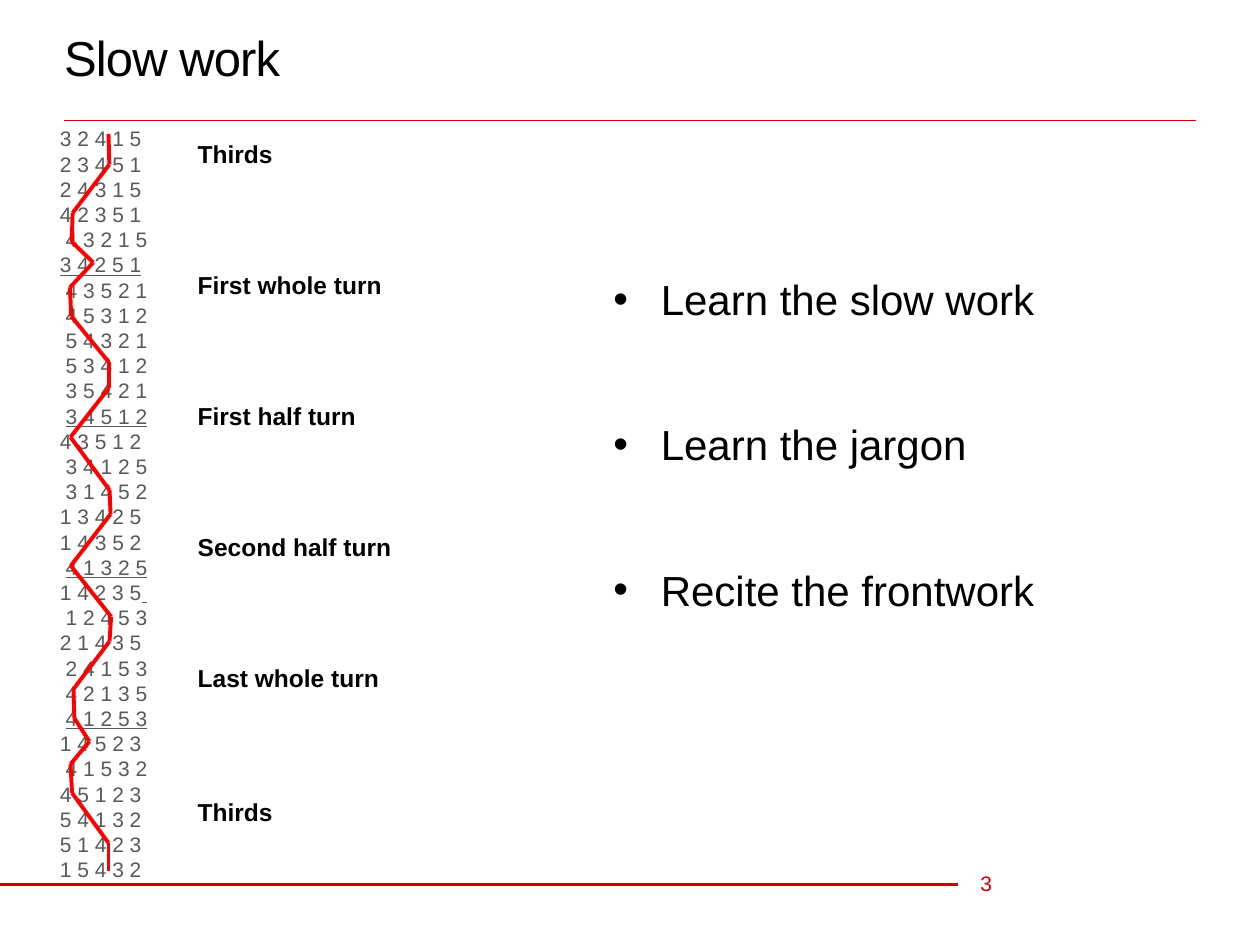
import itertools
import pptx
import pptx.util
import pptx.dml.color
import pptx.enum.shapes
import pptx.enum.text
from dataclasses import dataclass
from lxml import etree
from pptx.oxml.ns import qn

Pt = pptx.util.Pt
RGB = pptx.dml.color.RGBColor
ANCHOR = pptx.enum.text.MSO_ANCHOR


@dataclass(frozen=True)
class Theme:
    font: str = "Arial"
    black: RGB = RGB(0, 0, 0)
    grey: RGB = RGB(0x58, 0x59, 0x5B)
    rule: RGB = RGB(0xD2, 0, 0)
    path_red: RGB = RGB(0xFF, 0, 0)
    title: int = 28
    bullet: int = 24
    label: int = 14
    small: int = 12


theme = Theme()
deck = pptx.Presentation()
deck.slide_width, deck.slide_height = Pt(720), Pt(540)
page = deck.slides.add_slide(deck.slide_layouts[6])


def add_text(left, top, width, height, text, size, color, anchor=ANCHOR.TOP):
    frame = page.shapes.add_textbox(Pt(left), Pt(top), Pt(width), Pt(height)).text_frame
    frame.margin_left = frame.margin_right = frame.margin_top = frame.margin_bottom = 0
    frame.word_wrap = True
    frame.vertical_anchor = anchor
    frame.text = text
    for para in frame.paragraphs:
        for span in para.runs:
            span.font.name = theme.font
            span.font.size = Pt(size)
            span.font.color.rgb = color
    return frame


def add_line(start, end, color, weight):
    line = page.shapes.add_connector(
        pptx.enum.shapes.MSO_CONNECTOR.STRAIGHT, *[Pt(value) for value in (*start, *end)])
    line.line.color.rgb = color
    line.line.width = Pt(weight)
    etree.SubElement(line._element.spPr, qn("a:effectLst"))


# Rules and slide number
add_line((36.7, 69.1), (683.3, 69.1), theme.rule, 0.5)
add_line((0, 505.4), (547.2, 505.4), theme.rule, 2)
add_text(560.2, 490.3, 36.7, 28.8, "3", theme.small, theme.rule, ANCHOR.MIDDLE)

# Title
title = add_text(36.7, 3.6, 646.6, 58.3, "Slow work", theme.title, theme.black, ANCHOR.MIDDLE)
title.paragraphs[0].runs[0].font._element.set("spc", "-50")

# Rows of changes: the parts between underscores are underlined
changes = [
    "3 2 4 1 5 ", "2 3 4 5 1 ", "2 4 3 1 5 ", "4 2 3 5 1 ", "4 3 2 1 5", "_3 4 2 5 1_ ",
    "4 3 5 2 1", "4 5 3 1 2", "5 4 3 2 1", "5 3 4 1 2", "3 5 4 2 1", "_3 4 5 1 2_",
    "4 3 5 1 2 ", "3 4 1 2 5", "3 1 4 5 2", "1 3 4 2 5 ", "1 4 3 5 2 ", "_4 1 3 2 5_",
    "1 4 2 3 5_ _", "1 2 4 5 3", "2 1 4 3 5 ", "2 4 1 5 3", "4 2 1 3 5", "_4 1 2 5 3_",
    "1 4 5 2 3 ", "4 1 5 3 2", "4 5 1 2 3 ", "5 4 1 3 2 ", "5 1 4 2 3 ", "1 5 4 3 2 ",
]
para = add_text(25.2, 72, 59, 432, "", theme.small, theme.grey).paragraphs[0]
para.alignment = pptx.enum.text.PP_ALIGN.RIGHT
para.line_spacing = Pt(14.4)
for row, change in enumerate(changes):
    if row:
        para.add_line_break()
    for index, part in enumerate(change.split("_")):
        if part:
            span = para.add_run()
            span.text = part
            span.font.name = theme.font
            span.font.size = Pt(theme.small)
            span.font.color.rgb = theme.grey
            span.font.underline = index % 2 == 1

# Path of bell 4 through the rows
bell_path = [
    (62, 76.5), (62.5, 94), (41.5, 121.7), (41, 138.2), (53.3, 150), (40, 164.2),
    (40.7, 180.7), (62.2, 207), (62.2, 221.8), (40.3, 249.8), (62.6, 280.1),
    (63.2, 293.8), (40.5, 323.3), (63.5, 352.4), (62.6, 366.5), (42, 393.8),
    (42.5, 410.4), (51.1, 423.7), (40.3, 436.7), (41.2, 453.2), (62, 481.7), (62, 497.5),
]
for start, end in itertools.pairwise(bell_path):
    add_line(start, end, theme.path_red, 2.25)

# Names of the pieces of work
labels = ["Thirds", "First whole turn", "First half turn",
          "Second half turn", "Last whole turn", "Thirds"]
frame = add_text(113, 76.3, 189.4, 423.4, "\n".join(labels), theme.label, theme.black)
for index, para in enumerate(frame.paragraphs):
    para.line_spacing = 1.2
    para.space_before = Pt(54.6 if index else 0)
    para.runs[0].font.bold = True
frame.paragraphs[-1].space_before = Pt(56.7)

# Bulleted advice
advice = ["Learn the slow work", "Learn the jargon", "Recite the frontwork"]
frame = add_text(350.6, 156.5, 321, 205, "\n".join(advice), theme.bullet, theme.black)
for index, para in enumerate(frame.paragraphs):
    para.space_before = Pt(54.1 if index else 0)
    properties = para._p.get_or_add_pPr()
    properties.set("marL", str(Pt(27)))
    properties.set("indent", str(-Pt(27)))
    etree.SubElement(properties, qn("a:buFont"), typeface=theme.font)
    etree.SubElement(properties, qn("a:buChar"), char="•")

deck.save("out.pptx")
